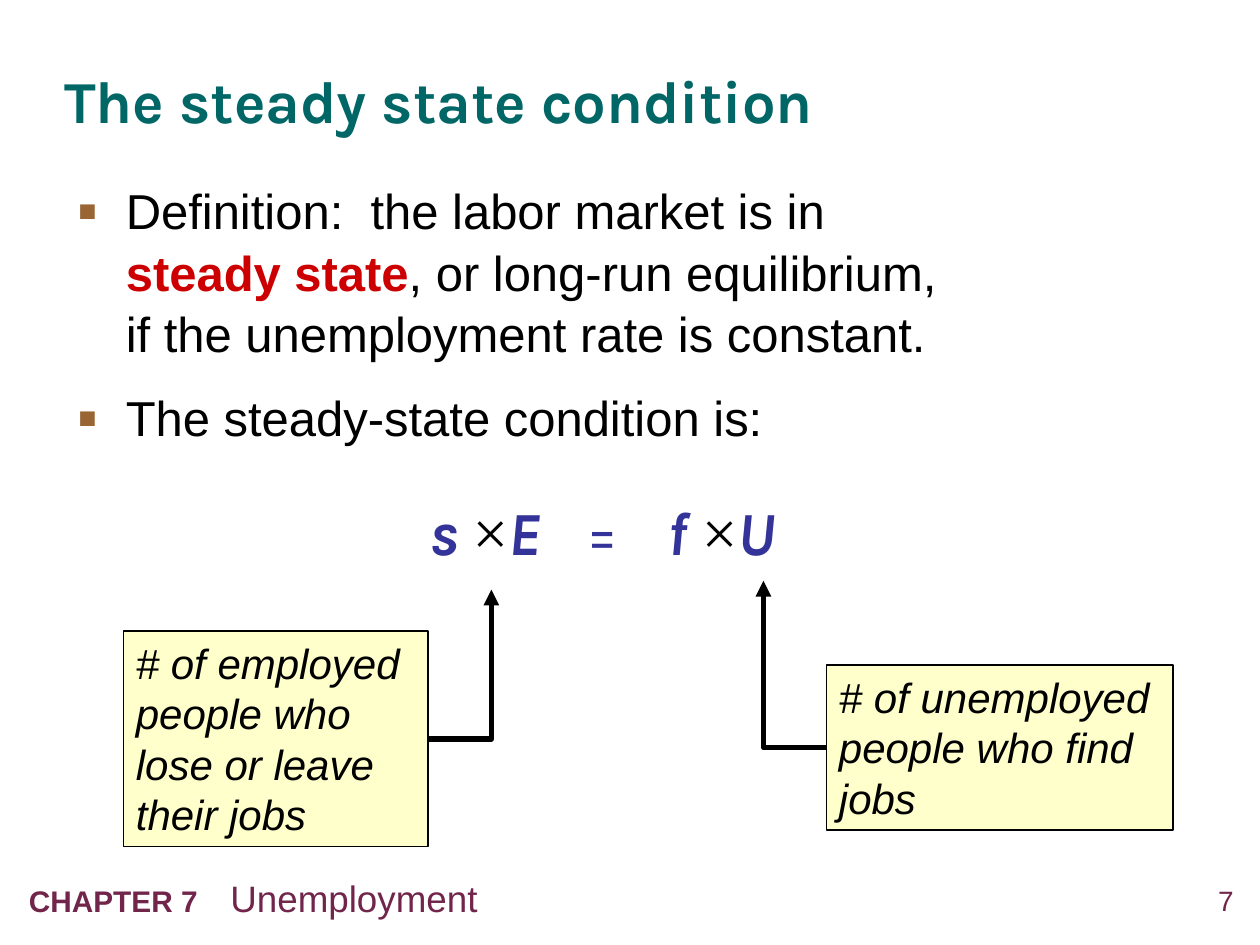
import pptx
import pptx.util
import pptx.dml.color
import pptx.enum.dml
import pptx.enum.shapes
import pptx.enum.text
import pptx.oxml
import pptx.oxml.ns
from dataclasses import dataclass
from lxml import etree

Inches = pptx.util.Inches
Pt = pptx.util.Pt
qn = pptx.oxml.ns.qn


@dataclass(frozen=True)
class Theme:
    sans: str = "Arial"
    display: str = "Karla"
    serif: str = "Times New Roman"
    heading: str = "006666"
    ink: str = "000000"
    key: str = "CC0000"
    bullet: str = "996633"
    formula: str = "333399"
    footer: str = "71254B"
    note: str = "FFFFCC"
    title_size: int = 34
    body_size: int = 28
    formula_size: int = 35
    times_size: int = 36
    note_size: int = 24
    chapter_size: int = 17
    topic_size: int = 21
    number_size: int = 16


THEME = Theme()


def color(value):
    return pptx.dml.color.RGBColor.from_string(value)


def style(face, size, ink, bold=False, italic=False):
    return {"name": face, "size": Pt(size), "bold": bold, "italic": italic, "color": ink}


def add_spans(para, spans):
    for text, look in spans:
        for index, piece in enumerate(text.split("\n")):
            if index:
                para.add_line_break()
            if not piece:
                continue
            span = para.add_run()
            span.text = piece
            for name, value in look.items():
                if name == "color":
                    span.font.color.rgb = color(value)
                else:
                    setattr(span.font, name, value)


def add_text(page, place, spans, frame_format=None, para_format=None):
    box = page.shapes.add_textbox(*map(Inches, place))
    frame = box.text_frame
    for name, value in {"word_wrap": True, **(frame_format or {})}.items():
        setattr(frame, name, value)
    para = frame.paragraphs[0]
    for name, value in (para_format or {}).items():
        setattr(para, name, value)
    add_spans(para, spans)
    return box


def set_tabs(para, stops):
    tabs = etree.SubElement(para._p.get_or_add_pPr(), qn("a:tabLst"))
    for stop in stops:
        etree.SubElement(tabs, qn("a:tab"), pos=str(Inches(stop)), algn="l")


def set_bullet(para, indent):
    props = para._p.get_or_add_pPr()
    props.set("marL", str(Inches(indent)))
    props.set("indent", str(-Inches(indent)))
    tint = etree.SubElement(props, qn("a:buClr"))
    etree.SubElement(tint, qn("a:srgbClr"), val=THEME.bullet)
    etree.SubElement(props, qn("a:buSzPct"), val="120000")
    etree.SubElement(props, qn("a:buFont"), typeface=THEME.sans)
    etree.SubElement(props, qn("a:buChar"), char="▪")


def add_bullets(page, place, items):
    frame = page.shapes.add_textbox(*map(Inches, place)).text_frame
    frame.word_wrap = True
    for index, spans in enumerate(items):
        para = frame.add_paragraph() if index else frame.paragraphs[0]
        para.line_spacing = 1.05
        para.space_before = Pt(0.45 * THEME.body_size)
        set_bullet(para, 0.38)
        add_spans(para, spans)


def add_note(page, place, text):
    box = page.shapes.add_shape(pptx.enum.shapes.MSO_SHAPE.RECTANGLE, *map(Inches, place))
    box.shadow.inherit = False
    box.fill.solid()
    box.fill.fore_color.rgb = color(THEME.note)
    box.line.color.rgb = color(THEME.ink)
    box.line.width = Pt(1)
    box.text_frame.word_wrap = True
    box.text_frame.vertical_anchor = pptx.enum.text.MSO_ANCHOR.TOP
    para = box.text_frame.paragraphs[0]
    para.alignment = pptx.enum.text.PP_ALIGN.LEFT
    add_spans(para, [(text, style(THEME.sans, THEME.note_size, THEME.ink, italic=True))])
    return box


def add_elbow_arrow(page, box, side, tip):
    start_x = box.left + (box.width if side == 3 else 0)
    start_y = box.top + box.height // 2
    arrow = page.shapes.add_connector(
        pptx.enum.shapes.MSO_CONNECTOR.ELBOW, start_x, start_y, *map(Inches, tip))
    arrow.begin_connect(box, side)
    arrow.line.color.rgb = color(THEME.ink)
    arrow.line.width = Pt(3)
    props = arrow._element.spPr
    props.find(qn("a:prstGeom")).set("prst", "bentConnector2")
    etree.SubElement(props.find(qn("a:ln")), qn("a:tailEnd"), type="triangle")
    etree.SubElement(props, qn("a:effectLst"))


def add_formula(page):
    symbol = style(THEME.display, THEME.formula_size, THEME.formula, bold=True, italic=True)
    equals = style(THEME.display, THEME.formula_size, THEME.formula)
    times = style(THEME.serif, THEME.times_size, THEME.ink)
    box = add_text(page, (3.31, 3.86, 3.58, 0.71), [
        ("s ", symbol), ("×", times), ("E\t", symbol), ("=\t", equals),
        ("f ", symbol), ("×", times), ("U", symbol)])
    set_tabs(box.text_frame.paragraphs[0], (1.25, 1.89))


def add_footer(page):
    chapter = style(THEME.sans, THEME.chapter_size, THEME.footer, bold=True)
    topic = style(THEME.sans, THEME.topic_size, THEME.footer)
    number = style(THEME.sans, THEME.number_size, THEME.footer)
    box = add_text(page, (0.13, 6.9, 8.18, 0.45),
                   [("CHAPTER 7\t", chapter), ("Unemployment", topic)])
    set_tabs(box.text_frame.paragraphs[0], (1.6,))
    add_text(page, (9.24, 7.01, 0.55, 0.32), [("7", number)], NO_MARGINS,
             {"alignment": pptx.enum.text.PP_ALIGN.RIGHT})


NO_MARGINS = {f"margin_{side}": 0 for side in ("left", "top", "right", "bottom")}


def main():
    deck = pptx.Presentation()
    deck.slide_width, deck.slide_height = Inches(10), Inches(7.5)
    page = deck.slides.add_slide(deck.slide_layouts[6])

    add_footer(page)
    add_text(page, (0.51, 0.26, 9.02, 1.03),
             [("The steady state condition",
               style(THEME.display, THEME.title_size, THEME.heading, bold=True))],
             {**NO_MARGINS, "vertical_anchor": pptx.enum.text.MSO_ANCHOR.MIDDLE},
             {"line_spacing": 1.05})

    plain = style(THEME.sans, THEME.body_size, THEME.ink)
    key = style(THEME.sans, THEME.body_size, THEME.key, bold=True)
    add_bullets(page, (0.52, 1.36, 8.98, 5.34), [
        [("Definition:  the labor market is in \n", plain),
         ("steady state", key),
         (", or long-run equilibrium, \nif the unemployment rate is constant.", plain)],
        [("The steady-state condition is:", plain)]])
    add_formula(page)

    for place, text, side, tip in (
            ((0.98, 5.01, 2.42, 1.71),
             "# of employed people who lose or leave their jobs", 3, (3.9, 4.68)),
            ((6.56, 5.28, 2.75, 1.31),
             "# of unemployed people who find jobs", 1, (6.06, 4.61))):
        add_elbow_arrow(page, add_note(page, place, text), side, tip)

    deck.save("out.pptx")


if __name__ == "__main__":
    main()
